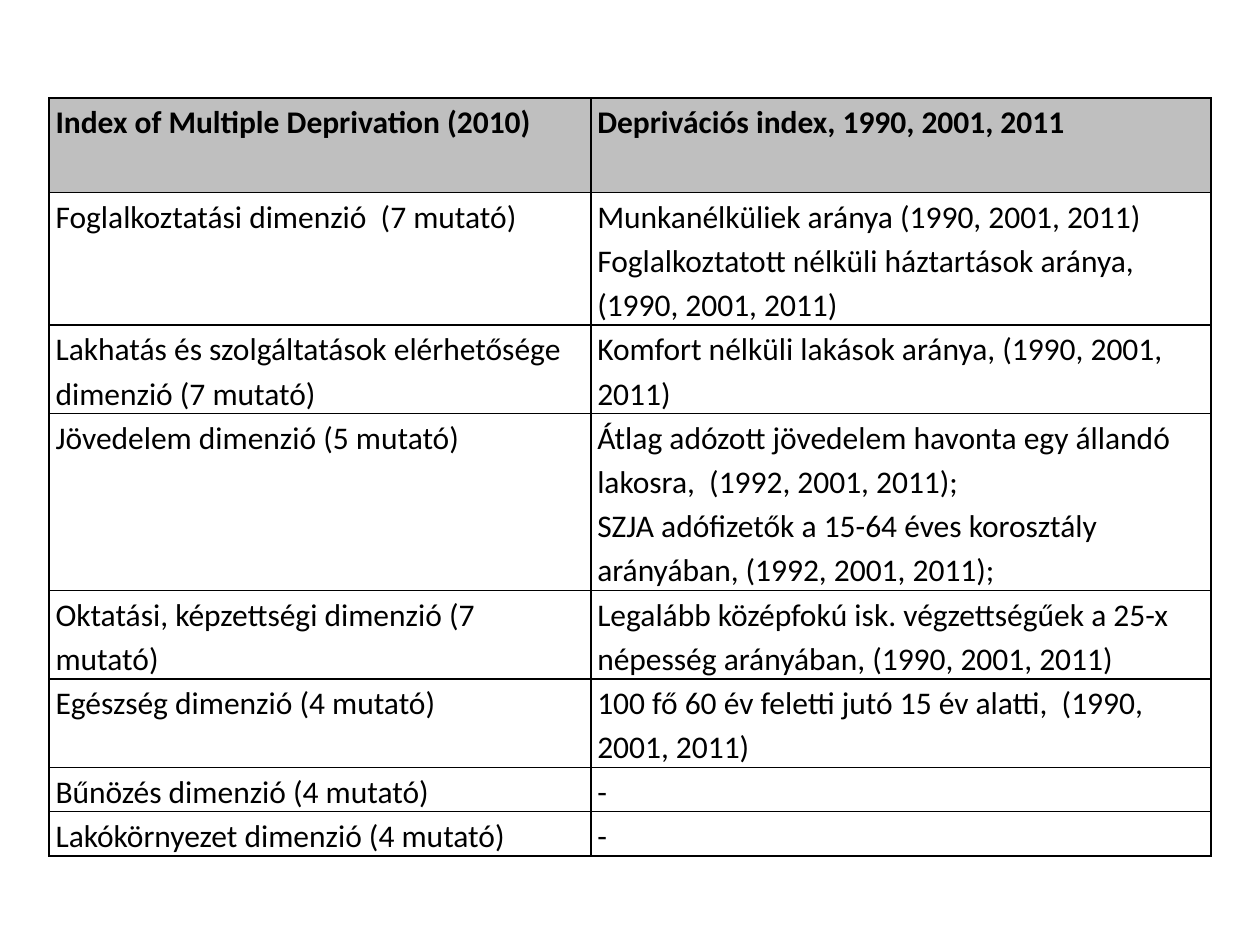
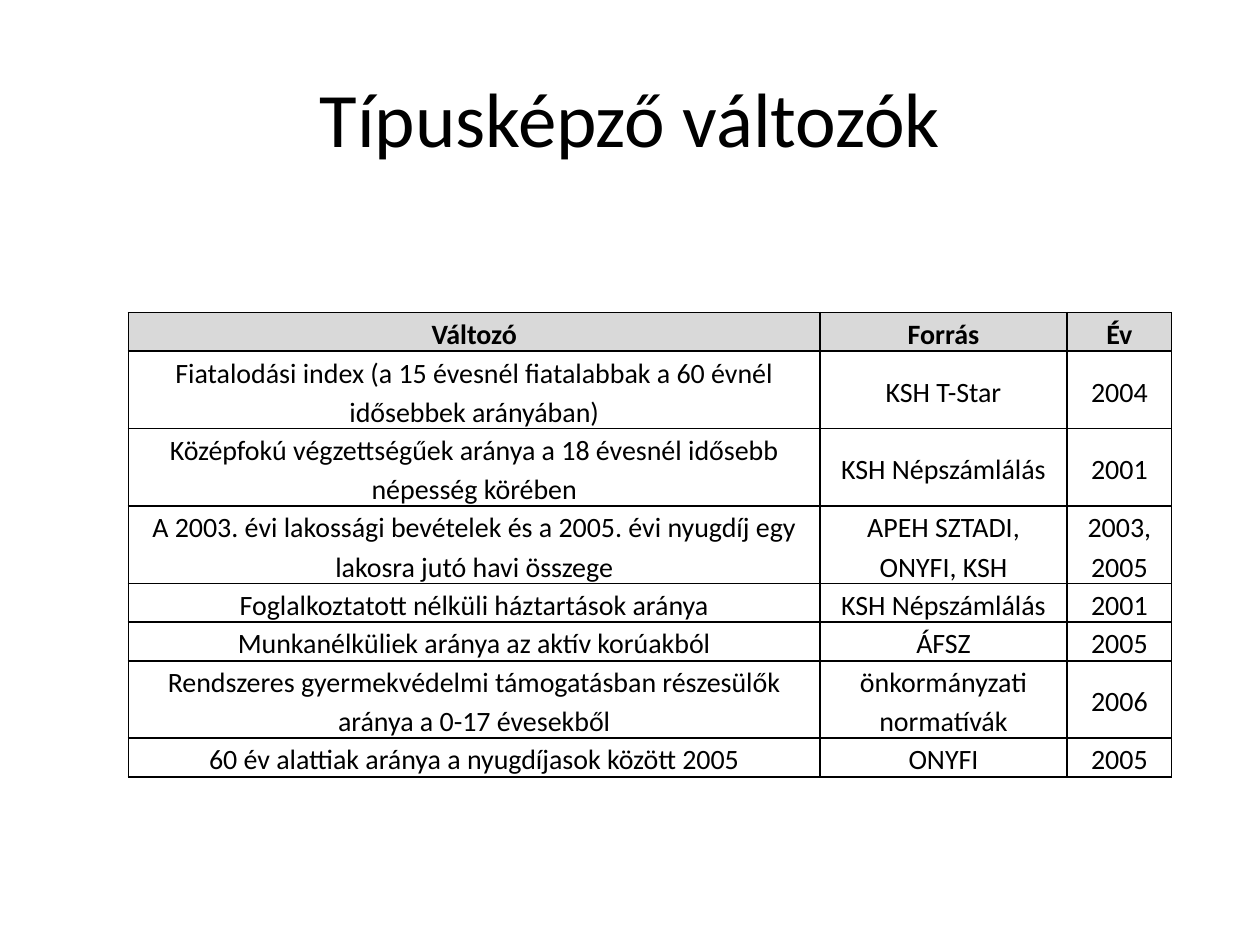
from lxml.etree import SubElement
from pptx import Presentation
from pptx.dml.color import RGBColor
from pptx.enum.text import MSO_ANCHOR, PP_ALIGN
from pptx.oxml.ns import qn
from pptx.util import Cm, Pt

FONT = "Calibri"
BLACK, WHITE = "000000", "FFFFFF"
INSET = Cm(0.13)

INDEX = [
    ("Index of Multiple Deprivation (2010)", "Deprivációs index, 1990, 2001, 2011"),
    ("Foglalkoztatási dimenzió  (7 mutató)",
     "Munkanélküliek aránya (1990, 2001, 2011)\v"
     "Foglalkoztatott nélküli háztartások aránya, (1990, 2001, 2011)"),
    ("Lakhatás és szolgáltatások elérhetősége dimenzió (7 mutató)",
     "Komfort nélküli lakások aránya, (1990, 2001, 2011)"),
    ("Jövedelem dimenzió (5 mutató)",
     "Átlag adózott jövedelem havonta egy állandó lakosra,  (1992, 2001, 2011);\v"
     "SZJA adófizetők a 15-64 éves korosztály arányában, (1992, 2001, 2011);"),
    ("Oktatási, képzettségi dimenzió (7 mutató)",
     "Legalább középfokú isk. végzettségűek a 25-x népesség arányában, "
     "(1990, 2001, 2011)"),
    ("Egészség dimenzió (4 mutató)",
     "100 fő 60 év feletti jutó 15 év alatti,  (1990, 2001, 2011)"),
    ("Bűnözés dimenzió (4 mutató)", "-"),
    ("Lakókörnyezet dimenzió (4 mutató)", "-"),
]

FACTORS = [
    ("Változó", "Forrás", "Év"),
    ("Fiatalodási index (a 15 évesnél fiatalabbak a 60 évnél idősebbek arányában)",
     "KSH T-Star", "2004"),
    ("Középfokú végzettségűek aránya a 18 évesnél idősebb népesség körében",
     "KSH Népszámlálás", "2001"),
    ("A 2003. évi lakossági bevételek és a 2005. évi nyugdíj egy lakosra jutó "
     "havi összege", "APEH SZTADI, ONYFI, KSH", "2003, 2005"),
    ("Foglalkoztatott nélküli háztartások aránya", "KSH Népszámlálás", "2001"),
    ("Munkanélküliek aránya az aktív korúakból", "ÁFSZ", "2005"),
    ("Rendszeres gyermekvédelmi támogatásban részesülők aránya a 0-17 évesekből",
     "önkormányzati normatívák", "2006"),
    ("60 év alattiak aránya a nyugdíjasok között 2005", "ONYFI", "2005"),
]


def color(code):
    return RGBColor.from_string(code)


def style(para, size, align, bold=False):
    para.alignment = align
    for run in para.runs:
        run.font.name = FONT
        run.font.size = Pt(size)
        run.font.bold = bold
        run.font.color.rgb = color(BLACK)


def border(cell):
    props = cell._tc.get_or_add_tcPr()
    for side in ("lnL", "lnR", "lnT", "lnB"):
        line = SubElement(props, qn(f"a:{side}"), w=str(Pt(1)))
        fill = SubElement(line, qn("a:solidFill"))
        SubElement(fill, qn("a:srgbClr"), val=BLACK)


def add_title(slide, box, text):
    frame = slide.shapes.add_textbox(*map(Cm, box)).text_frame
    frame.word_wrap = True
    frame.vertical_anchor = MSO_ANCHOR.MIDDLE
    frame.text = text
    style(frame.paragraphs[0], 44, PP_ALIGN.CENTER)


def add_grid(slide, spot, data, widths, heights, head, size,
             align=PP_ALIGN.LEFT, anchor=MSO_ANCHOR.TOP, gap=0):
    """Draw a ruled table at spot; head fills the first row, gap is in points."""
    box = (*spot, sum(widths), sum(heights))
    table = slide.shapes.add_table(len(data), len(widths), *map(Cm, box)).table
    table.first_row = table.horz_banding = False
    for col, width in zip(table.columns, widths):
        col.width = Cm(width)
    for num, (row, height, texts) in enumerate(zip(table.rows, heights, data)):
        row.height = Cm(height)
        for cell, text in zip(row.cells, texts):
            border(cell)
            cell.fill.solid()
            cell.fill.fore_color.rgb = color(WHITE if num else head)
            cell.margin_left = cell.margin_right = INSET
            cell.margin_top = cell.margin_bottom = 0
            cell.vertical_anchor = anchor if num else MSO_ANCHOR.TOP
            para = cell.text_frame.paragraphs[0]
            para.text = text
            para.line_spacing = 1.15
            para.space_before = para.space_after = Pt(gap)
            style(para, size, align, bold=num == 0)


def index_slide(slide):
    heights = [1.9] + [0.89 * lines for lines in (3, 2, 4, 2, 2, 1, 1)]
    add_grid(slide, (0.99, 1.98), INDEX, (10.92, 12.5), heights, "BFBFBF", 18)


def factor_slide(slide):
    add_title(slide, (1.27, 0.76, 22.86, 3.18), "Típusképző változók")
    heights = [0.78 * lines for lines in (1, 2, 2, 2, 1, 1, 2, 1)]
    add_grid(slide, (2.59, 6.3), FACTORS, (13.94, 4.98, 2.11), heights, "D9D9D9", 16,
             PP_ALIGN.CENTER, MSO_ANCHOR.MIDDLE, gap=3)


def main():
    deck = Presentation()
    deck.slide_width, deck.slide_height = Cm(25.4), Cm(19.05)
    for build in (index_slide, factor_slide):
        build(deck.slides.add_slide(deck.slide_layouts[6]))
    deck.save("out.pptx")


if __name__ == "__main__":
    main()
